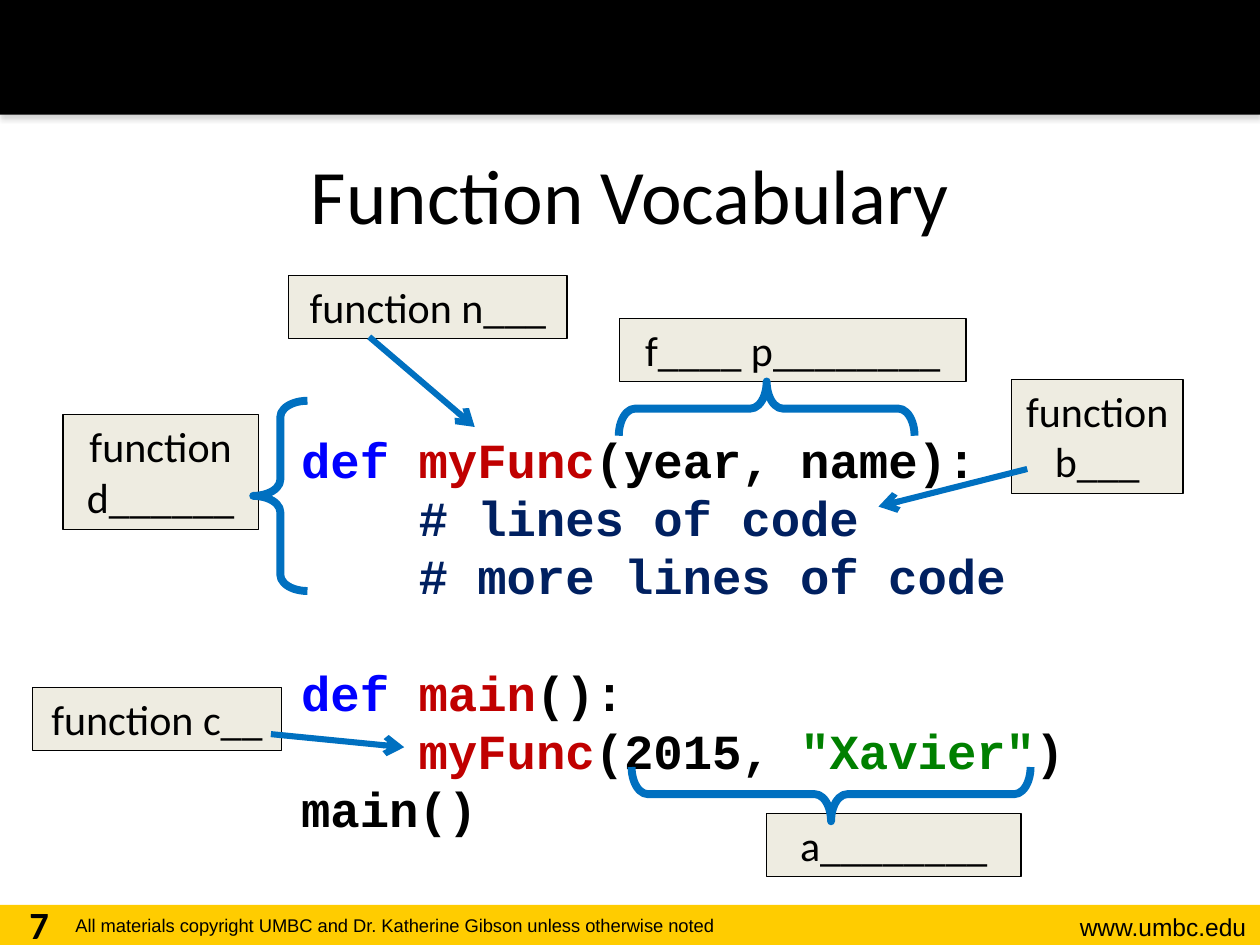
from lxml import etree
from pptx import Presentation
from pptx.dml.color import RGBColor
from pptx.enum.shapes import MSO_CONNECTOR, MSO_SHAPE
from pptx.enum.text import MSO_ANCHOR, MSO_AUTO_SIZE, PP_ALIGN
from pptx.oxml import parse_xml
from pptx.oxml.ns import nsdecls, qn
from pptx.util import Pt

RECT, BRACE = MSO_SHAPE.RECTANGLE, MSO_SHAPE.LEFT_BRACE
LINE = MSO_CONNECTOR.STRAIGHT
TOP, MID = MSO_ANCHOR.TOP, MSO_ANCHOR.MIDDLE
LEFT, MIDST, RIGHT = PP_ALIGN.LEFT, PP_ALIGN.CENTER, PP_ALIGN.RIGHT
GROW, FIXED = MSO_AUTO_SIZE.SHAPE_TO_FIT_TEXT, MSO_AUTO_SIZE.NONE

BLACK = RGBColor(0x00, 0x00, 0x00)
GOLD = RGBColor(0xFF, 0xCC, 0x00)
CREAM = RGBColor(0xEE, 0xEC, 0xE1)
BLUE = RGBColor(0x00, 0x70, 0xC0)
KEY = RGBColor(0x00, 0x00, 0xFF)
RED = RGBColor(0xC0, 0x00, 0x00)
NAVY = RGBColor(0x00, 0x20, 0x60)
GREEN = RGBColor(0x00, 0x80, 0x00)

SHADE = (
    f'<a:effectLst {nsdecls("a")}>'
    '<a:outerShdw blurRad="39370" dist="22860" dir="5400000" rotWithShape="0">'
    '<a:srgbClr val="808080"><a:alpha val="35000"/></a:srgbClr>'
    '</a:outerShdw></a:effectLst>'
)


def write(frame, lines, size=24, font="Calibri", bold=False, align=LEFT,
          anchor=TOP, fit=GROW, pitch=None):
    frame.word_wrap = True
    frame.auto_size = fit
    frame.vertical_anchor = anchor
    gap = False
    for i, line in enumerate(lines):
        if not line:
            gap = True
            continue
        para = frame.paragraphs[0] if i == 0 else frame.add_paragraph()
        para.alignment = align
        if pitch:
            para.line_spacing = Pt(pitch)
        if gap:
            para.space_before = Pt(pitch)
            gap = False
        for text, color in line:
            run = para.add_run()
            run.text = text
            run.font.size = Pt(size)
            run.font.name = font
            run.font.bold = bold
            run.font.color.rgb = color


class Deck:
    def __init__(self):
        self.show = Presentation()
        self.show.slide_width = Pt(720)
        self.show.slide_height = Pt(540)
        self.slide = self.show.slides.add_slide(self.show.slide_layouts[6])
        self.shapes = self.slide.shapes

    def band(self, top, high, color, shade=False):
        shape = self.shapes.add_shape(RECT, 0, Pt(top), Pt(720), Pt(high))
        shape.fill.solid()
        shape.fill.fore_color.rgb = color
        shape.line.fill.background()
        shape.shadow.inherit = False
        if shade:
            props = shape._element.spPr
            props.replace(props.find(qn("a:effectLst")), parse_xml(SHADE))

    def text(self, box, lines, inset=3.6, **style):
        frame = self.shapes.add_textbox(*map(Pt, box)).text_frame
        frame.margin_top = Pt(inset)
        write(frame, lines, **style)

    def label(self, box, text):
        shape = self.shapes.add_shape(RECT, *map(Pt, box))
        shape.shadow.inherit = False
        shape.fill.solid()
        shape.fill.fore_color.rgb = CREAM
        shape.line.color.rgb = BLACK
        shape.line.width = Pt(0.75)
        write(shape.text_frame, [[(text, BLACK)]], align=MIDST)

    def brace(self, box, turn=0):
        shape = self.shapes.add_shape(BRACE, *map(Pt, box))
        shape.rotation = turn
        shape.adjustments[0] = 0.3
        shape.adjustments[1] = 0.5
        shape.shadow.inherit = False
        shape.fill.background()
        shape.line.color.rgb = BLUE
        shape.line.width = Pt(4.5)

    def arrow(self, ends):
        link = self.shapes.add_connector(LINE, *map(Pt, ends))
        link.line.color.rgb = BLUE
        link.line.width = Pt(3.5)
        etree.SubElement(link.line._get_or_add_ln(), qn("a:tailEnd"), type="arrow")
        etree.SubElement(link._element.spPr, qn("a:effectLst"))


def main():
    deck = Deck()
    deck.band(517, 23, GOLD)
    deck.band(0, 65.5, BLACK, shade=True)
    deck.text((576, 517.7, 143.3, 24.5), [[("www.umbc.edu", BLACK)]],
              size=14, font="Arial", align=RIGHT)
    note = "All materials copyright UMBC and Dr. Katherine Gibson unless otherwise noted"
    deck.text((36, 519, 472, 21), [[(note, BLACK)]], size=10.5, font="Arial")
    deck.text((36, 65.5, 648, 90), [[("Function Vocabulary", BLACK)]],
              size=44, align=MIDST, anchor=MID, fit=FIXED)
    deck.text((0, 511.2, 44.6, 28.8), [[("7", BLACK)]],
              size=22, bold=True, align=MIDST, fit=FIXED)

    code = [
        [("def ", KEY), ("myFunc", RED), ("(year, name):", BLACK)],
        [("    # lines of code", NAVY)],
        [("    # more lines of code", NAVY)],
        [],
        [("def ", KEY), ("main", RED), ("():", BLACK)],
        [("    ", BLACK), ("myFunc", RED), ("(2015, ", BLACK),
         ('"Xavier"', GREEN), (")", BLACK)],
        [("main()", BLACK)],
    ]
    deck.text((165, 237, 591, 245), code, inset=8.6, size=28,
              font="Courier New", bold=True, fit=FIXED, pitch=33.3)

    deck.label((165, 157.5, 159, 36), "function n___")
    deck.arrow((211, 192.5, 271.3, 244))
    deck.label((354, 182, 198, 36), "f____ p________")
    deck.brace((422.6, 149, 31, 169), turn=90)
    deck.label((36, 237, 111.6, 65.5), "function d______")
    deck.brace((144.7, 229, 31, 108.7))
    deck.label((18.7, 393, 142, 36), "function c__")
    deck.arrow((154.8, 419.5, 231, 427))
    deck.label((578, 216.7, 98, 65.5), "function b___")
    deck.arrow((587, 268, 502, 289.5))
    deck.label((438, 465, 145.4, 36), "a________")
    deck.brace((459.4, 339.8, 31, 228), turn=270)
    deck.show.save("out.pptx")


if __name__ == "__main__":
    main()
